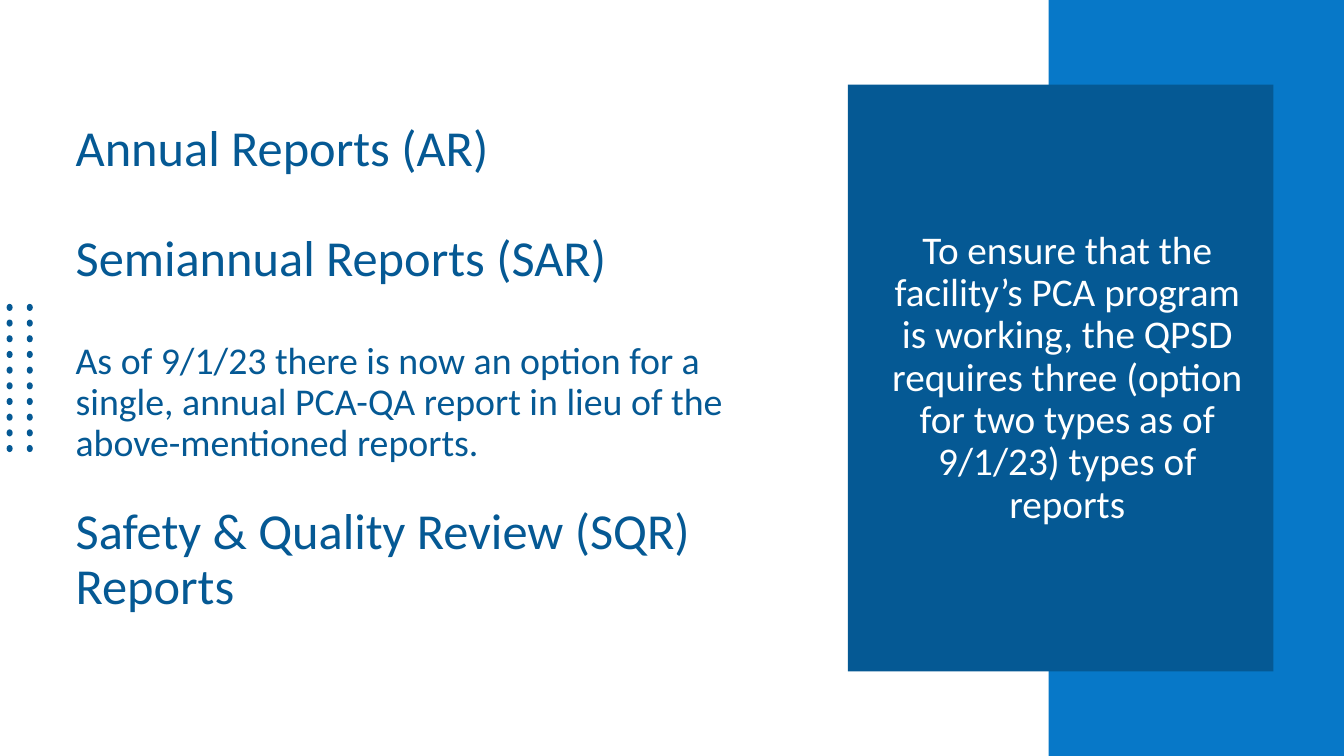
import itertools
from dataclasses import dataclass

import pptx
import pptx.dml.color
import pptx.enum.shapes
import pptx.enum.text
import pptx.util
from pptx.util import Inches


@dataclass(frozen=True)
class Theme:
    font: str = "Calibri"
    white: str = "FFFFFF"
    navy: str = "055994"
    blue: str = "0778C8"
    heading: int = 36
    note: int = 27
    callout: int = 28
    line_spacing: float = 0.9


THEME = Theme()

REPORTS = [
    ("Annual Reports (AR)", THEME.heading, 39.5),
    ("Semiannual Reports (SAR)", THEME.heading, 39.5),
    ("As of 9/1/23 there is now an option for a single, annual PCA-QA report "
     "in lieu of the above-mentioned reports.", THEME.note, 29.5),
    ("Safety & Quality Review (SQR) Reports", THEME.heading, 0),
]
CALLOUT = ("To ensure that the facility’s PCA program is working, the QPSD requires "
           "three (option for two types as of 9/1/23) types of reports")


def rgb(color):
    return pptx.dml.color.RGBColor.from_string(color)


def place(shape, left, top, width, height):
    shape.left, shape.top = Inches(left), Inches(top)
    shape.width, shape.height = Inches(width), Inches(height)


def add_filled(shapes, kind, left, top, width, height, color):
    shape = shapes.add_shape(kind, Inches(left), Inches(top), Inches(width), Inches(height))
    shape.shadow.inherit = False
    shape.fill.solid()
    shape.fill.fore_color.rgb = rgb(color)
    shape.line.fill.background()
    return shape


def prepare_frame(frame):
    frame.word_wrap = True
    frame.auto_size = pptx.enum.text.MSO_AUTO_SIZE.NONE
    frame.vertical_anchor = pptx.enum.text.MSO_ANCHOR.MIDDLE


def format_para(para, size, color, alignment, space_after=0):
    para.alignment = alignment
    para.line_spacing = THEME.line_spacing
    para.space_after = pptx.util.Pt(space_after)
    for span in para.runs:
        span.font.name = THEME.font
        span.font.size = pptx.util.Pt(size)
        span.font.color.rgb = rgb(color)


def fill_title(title):
    place(title, 0.65, 0.84, 7.07, 6.44)
    frame = title.text_frame
    prepare_frame(frame)
    frame.margin_bottom = Inches(0.85)
    frame.text = "\n".join(text for text, size, gap in REPORTS)
    for para, (text, size, gap) in zip(frame.paragraphs, REPORTS):
        format_para(para, size, THEME.navy, pptx.enum.text.PP_ALIGN.LEFT, gap)


def add_callout(page):
    box = page.shapes.add_textbox(Inches(8.73), Inches(1.1), Inches(3.71), Inches(5.31))
    prepare_frame(box.text_frame)
    box.text_frame.text = CALLOUT
    para = box.text_frame.paragraphs[0]
    format_para(para, THEME.callout, THEME.white, pptx.enum.text.PP_ALIGN.CENTER)
    para.space_before = pptx.util.Pt(10)


def add_dots(page, rows=10, columns=2):
    group = page.shapes.add_group_shape()
    oval = pptx.enum.shapes.MSO_SHAPE.OVAL
    for row, column in itertools.product(range(rows), range(columns)):
        left, top = 0.06 + 0.2 * column, 3.02 + 1.4 * row / (rows - 1)
        dot = add_filled(group.shapes, oval, left, top, 0.07, 0.06, THEME.navy)
        dot.rotation = 90


def main():
    deck = pptx.Presentation()
    deck.slide_width, deck.slide_height = Inches(13.33), Inches(7.5)
    page = deck.slides.add_slide(deck.slide_layouts[5])
    page.background.fill.solid()
    page.background.fill.fore_color.rgb = rgb(THEME.white)
    fill_title(page.shapes.title)
    rectangle = pptx.enum.shapes.MSO_SHAPE.RECTANGLE
    add_filled(page.shapes, rectangle, 10.4, 0, 2.93, 7.5, THEME.blue)
    add_filled(page.shapes, rectangle, 8.41, 0.84, 4.22, 5.82, THEME.navy)
    add_callout(page)
    add_dots(page)
    deck.save("out.pptx")


if __name__ == "__main__":
    main()
